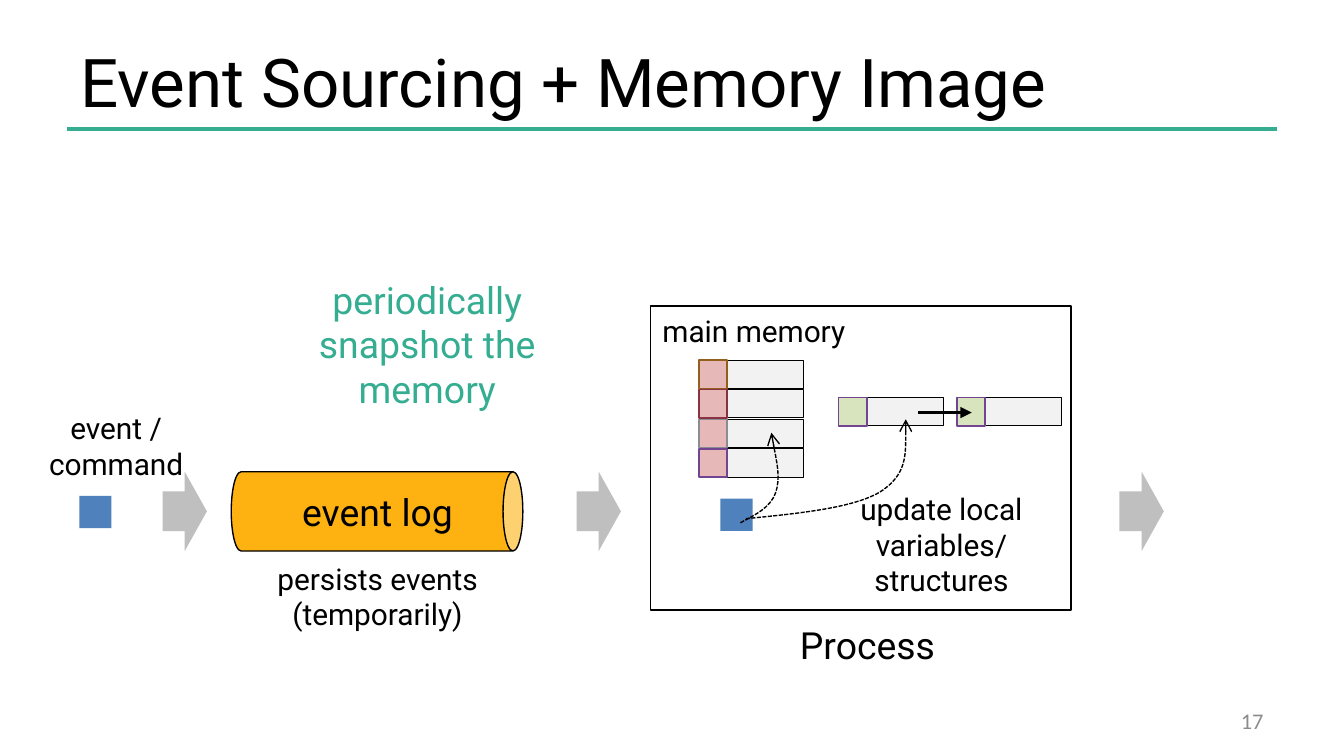
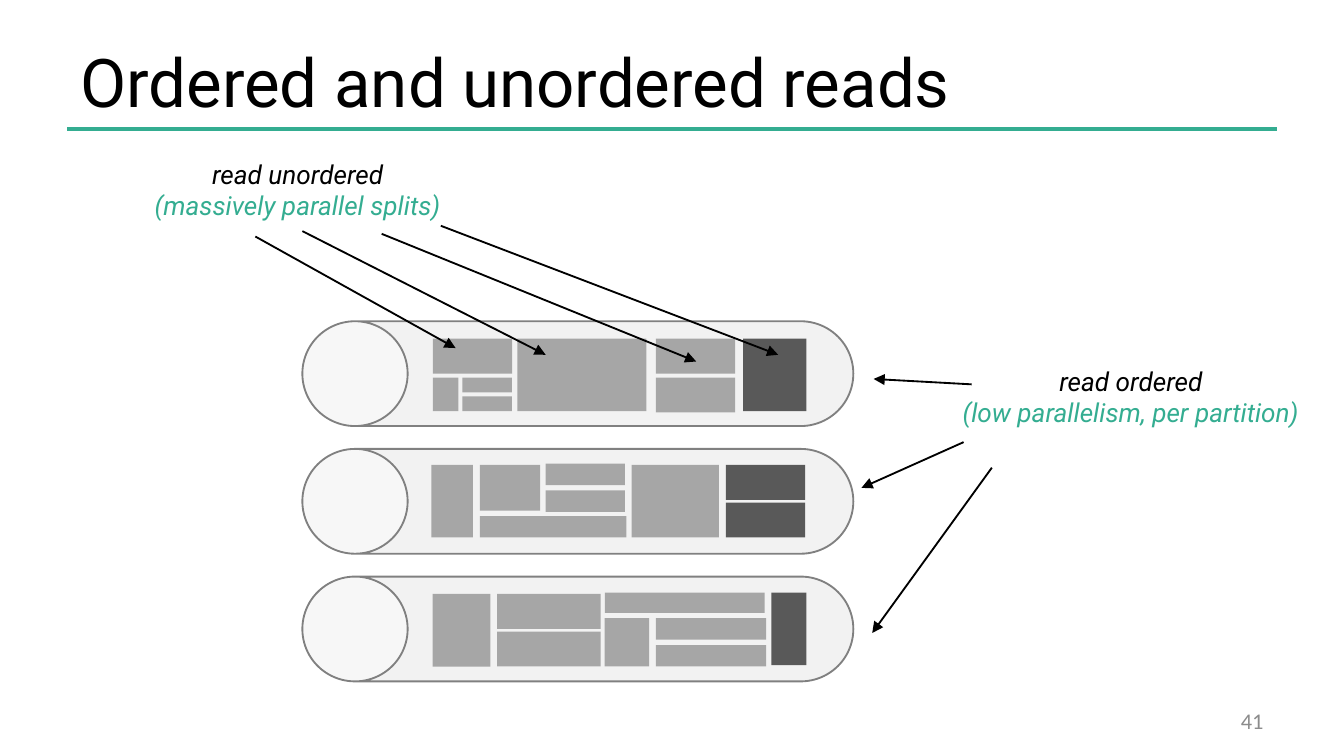
import pptx
import pptx.util
import pptx.dml.color
import pptx.enum.dml
import pptx.enum.shapes
import pptx.enum.text
import pptx.oxml
import pptx.oxml.ns
from lxml import etree

RGB = pptx.dml.color.RGBColor
TEAL = RGB(0x34, 0xAD, 0x91)
BLACK = RGB(0, 0, 0)
WHITE_GREY = RGB(0xF2, 0xF2, 0xF2)
ARROW_GREY = RGB(0xBF, 0xBF, 0xBF)
SEGMENT_GREY = RGB(0xA6, 0xA6, 0xA6)
TAIL_GREY = RGB(0x59, 0x59, 0x59)
EDGE_GREY = RGB(0x80, 0x80, 0x80)
NUMBER_GREY = RGB(0x8C, 0x8C, 0x8C)
ORANGE = RGB(0xFD, 0xB2, 0x12)
BLUE = RGB(0x4F, 0x81, 0xBD)
PINK = RGB(0xE6, 0xB9, 0xB8)
GREEN = RGB(0xD7, 0xE4, 0xBD)
BROWN = RGB(0x93, 0x5F, 0x1C)
RED = RGB(0x8A, 0x31, 0x42)
STEEL = RGB(0x89, 0x8C, 0x92)
PURPLE = RGB(0x72, 0x45, 0x91)

SHAPE = pptx.enum.shapes.MSO_SHAPE
ALIGN = pptx.enum.text.PP_ALIGN
MIDDLE = pptx.enum.text.MSO_ANCHOR.MIDDLE
qn = pptx.oxml.ns.qn

prs = pptx.Presentation()
prs.slide_width = pptx.util.Inches(10)
prs.slide_height = prs.slide_width * 9 // 16

# All places are in cells of a square grid, 100 columns across the slide
CELL = prs.slide_width // 100


def add_box(s, kind, x, y, w, h, fill=None, line=None, weight=0.5):
    sp = s.shapes.add_shape(kind, *(round(v * CELL) for v in (x, y, w, h)))
    sp.shadow.inherit = False
    if fill is None:
        sp.fill.background()
    else:
        sp.fill.solid()
        sp.fill.fore_color.rgb = fill
    if line is None:
        sp.line.fill.background()
    else:
        sp.line.color.rgb = line
        sp.line.width = pptx.util.Pt(weight)
    return sp


def add_text(s, text, x, y, w, h, size, color=BLACK, align=ALIGN.CENTER, font="Roboto"):
    sp = s.shapes.add_textbox(*(round(v * CELL) for v in (x, y, w, h)))
    tf = sp.text_frame
    tf.word_wrap = True
    tf.text = text
    for p in tf.paragraphs:
        p.alignment = align
        for r in p.runs:
            r.font.name = font
            r.font.size = pptx.util.Pt(size)
            r.font.color.rgb = color
    return tf


# Title, rule and number of each slide
lines = []
for title, number in (("Event Sourcing + Memory Image", "17"),
                      ("Ordered and unordered reads", "41")):
    s = prs.slides.add_slide(prs.slide_layouts[6])
    tf = add_text(s, title, 5, 2.3, 81.8, 7.4, 36, align=ALIGN.LEFT)
    tf.vertical_anchor = MIDDLE
    tf = add_text(s, number, 71.7, 52.1, 23.3, 3, 12, NUMBER_GREY, ALIGN.RIGHT, "Calibri")
    tf.vertical_anchor = MIDDLE
    lines.append((s, 5, 9.6, 95, 9.6, TEAL, 2, None))
events, reads = prs.slides

# Slide 1: event log and block arrows
log = add_box(events, SHAPE.CAN, 25.1, 27.2, 5.9, 21.7, ORANGE, BLACK, 0.75)
log.rotation = 90
for x in (12.1, 42.9, 83.3):
    add_box(events, SHAPE.RIGHT_ARROW, x, 35.1, 3.3, 5.9, ARROW_GREY)

# Process with its main memory
add_box(events, SHAPE.RECTANGLE, 48.4, 22.8, 31.3, 22.6, None, BLACK, 1)
cells = [(52, 26.8 + 2.2 * i, PINK, edge)
         for i, edge in enumerate((BROWN, RED, STEEL, PURPLE))]
cells += [(x, 29.6, GREEN, PURPLE) for x in (62.4, 71.2)]
for x, y, fill, edge in cells:
    add_box(events, SHAPE.RECTANGLE, x + 2.1, y, 5.7, 2.1, WHITE_GREY, BLACK)
    add_box(events, SHAPE.RECTANGLE, x, y, 2.1, 2.1, fill, edge, 0.75)
lines.append((events, 68.3, 30.7, 72.3, 30.7, BLACK, 2, "triangle"))

# The event, outside and inside the process
for x, y in ((5.9, 36.9), (53.6, 37.1)):
    add_box(events, SHAPE.RECTANGLE, x, y, 2.4, 2.4, BLUE)

# Dashed curves from the event to what it updates
curves = (
    ((55.1, 38.9), (56.2, 38.3), (57.3, 37.8), (57.7, 36.7),
     (58.1, 35.6), (57.7, 33.9), (57.4, 32.2)),
    ((55.5, 38.6), (59.5, 38.2), (63.5, 37.8), (65.5, 36.6),
     (67.5, 35.3), (67.4, 33.3), (67.4, 31.2)),
)
for curve in curves:
    points = [(round(x * CELL), round(y * CELL)) for x, y in curve]
    outline = events.shapes.build_freeform(*points[0])
    outline.add_line_segments(points[1:], close=False)
    sp = outline.convert_to_shape()
    sp.shadow.inherit = False
    sp.fill.background()
    sp.line.color.rgb = BLACK
    sp.line.width = pptx.util.Pt(0.75)
    sp.line.dash_style = pptx.enum.dml.MSO_LINE.SQUARE_DOT
    etree.SubElement(sp.line._get_or_add_ln(), qn("a:tailEnd"), type="arrow")
    # Every three segments become one Bezier segment
    segments = list(sp._element.iter(qn("a:lnTo")))
    for i in range(0, len(segments), 3):
        bezier = etree.Element(qn("a:cubicBezTo"))
        segments[i].addprevious(bezier)
        for segment in segments[i:i + 3]:
            bezier.append(segment[0])
            segment.getparent().remove(segment)

# Labels
for text, x, y, w, h, size, color in (
    ("event log", 18.6, 35.9, 19, 4.4, 20, BLACK),
    ("persists events\n(temporarily)", 16.8, 41.2, 22.6, 6.4, 16, BLACK),
    ("event /\vcommand", 2.3, 30, 12.7, 6.4, 16, BLACK),
    ("Process", 58.2, 45.8, 12.7, 4.4, 20, BLACK),
    ("main memory", 47.8, 22.8, 16.6, 3.7, 16, BLACK),
    ("update local\nvariables/structures", 59.6, 36, 20.9, 6.4, 16, BLACK),
    ("periodically snapshot the memory", 17.8, 20.1, 28, 7.7, 20, TEAL),
):
    add_text(events, text, x, y, w, h, size, color)

# Slide 2: partitions, each with segments as (x, y in partition, w, h)
partitions = (
    ([(32.2, 0.1, 5.9, 2.6), (32.2, 3, 1.9, 2.5), (34.4, 3, 3.7, 1.1),
      (34.4, 4.4, 3.7, 1.1), (38.5, 0.1, 9.6, 5.4), (48.8, 0.1, 5.9, 2.6),
      (48.8, 3, 5.9, 2.6)],
     [(55.3, 0.1, 4.7, 5.4)]),
    ([(32.1, 0, 3.1, 5.4), (35.7, 0, 4.5, 3.4), (35.7, 3.8, 10.9, 1.6),
      (40.6, -0.1, 5.9, 1.6), (40.6, 1.9, 5.9, 1.6), (47, 0, 6.5, 5.4)],
     [(54, 0, 5.9, 2.6), (54, 2.8, 5.9, 2.6)]),
    ([(32.2, 0.1, 4.3, 5.4), (37, 0.1, 7.7, 2.6), (37, 2.9, 7.7, 2.6),
      (45, 0, 11.9, 1.5), (45, 1.9, 3.3, 3.6), (48.8, 1.9, 8.2, 1.6),
      (48.8, 3.9, 8.2, 1.6)],
     [(57.4, 0, 2.6, 5.4)]),
)
for i, (sealed, newest) in enumerate(partitions):
    drop = 9.5 * i
    tube = add_box(reads, SHAPE.CAN, 39.1, 7.3 + drop, 7.8, 41, WHITE_GREY, EDGE_GREY, 1)
    tube.rotation = 270
    tube.adjustments[0] = 1.005
    for segments, fill in ((sealed, SEGMENT_GREY), (newest, TAIL_GREY)):
        for x, y, w, h in segments:
            add_box(reads, SHAPE.RECTANGLE, x, 25.1 + drop + y, w, h, fill)

# Labels of the two ways to read
for text, x, y in (("read ordered\n(low parallelism, per partition)", 70.6, 26.7),
                   ("read unordered\n(massively parallel splits)", 8.6, 11.3)):
    tf = add_text(reads, text, x, y, 27.1, 5.7, 14)
    for p in tf.paragraphs:
        p.runs[0].font.italic = True
    tf.paragraphs[1].runs[0].font.color.rgb = TEAL

for ends in ((72.3, 28.6, 65, 28.2), (71.7, 32.9, 64.1, 36.3), (73.8, 34.8, 64.9, 47.1),
             (19, 17.6, 33.9, 25.9), (22.5, 17.2, 40.6, 26.4),
             (28.4, 17.4, 51.8, 26.9), (32.8, 16.8, 57.9, 26.4)):
    lines.append((reads, *ends, BLACK, 1, "triangle"))

# Straight lines and arrows of both slides
for s, x1, y1, x2, y2, color, weight, tail in lines:
    sp = s.shapes.add_connector(pptx.enum.shapes.MSO_CONNECTOR.STRAIGHT,
                                *(round(v * CELL) for v in (x1, y1, x2, y2)))
    sp.line.color.rgb = color
    sp.line.width = pptx.util.Pt(weight)
    if tail:
        etree.SubElement(sp.line._get_or_add_ln(), qn("a:tailEnd"), type=tail)
    etree.SubElement(sp._element.spPr, qn("a:effectLst"))

prs.save("out.pptx")
